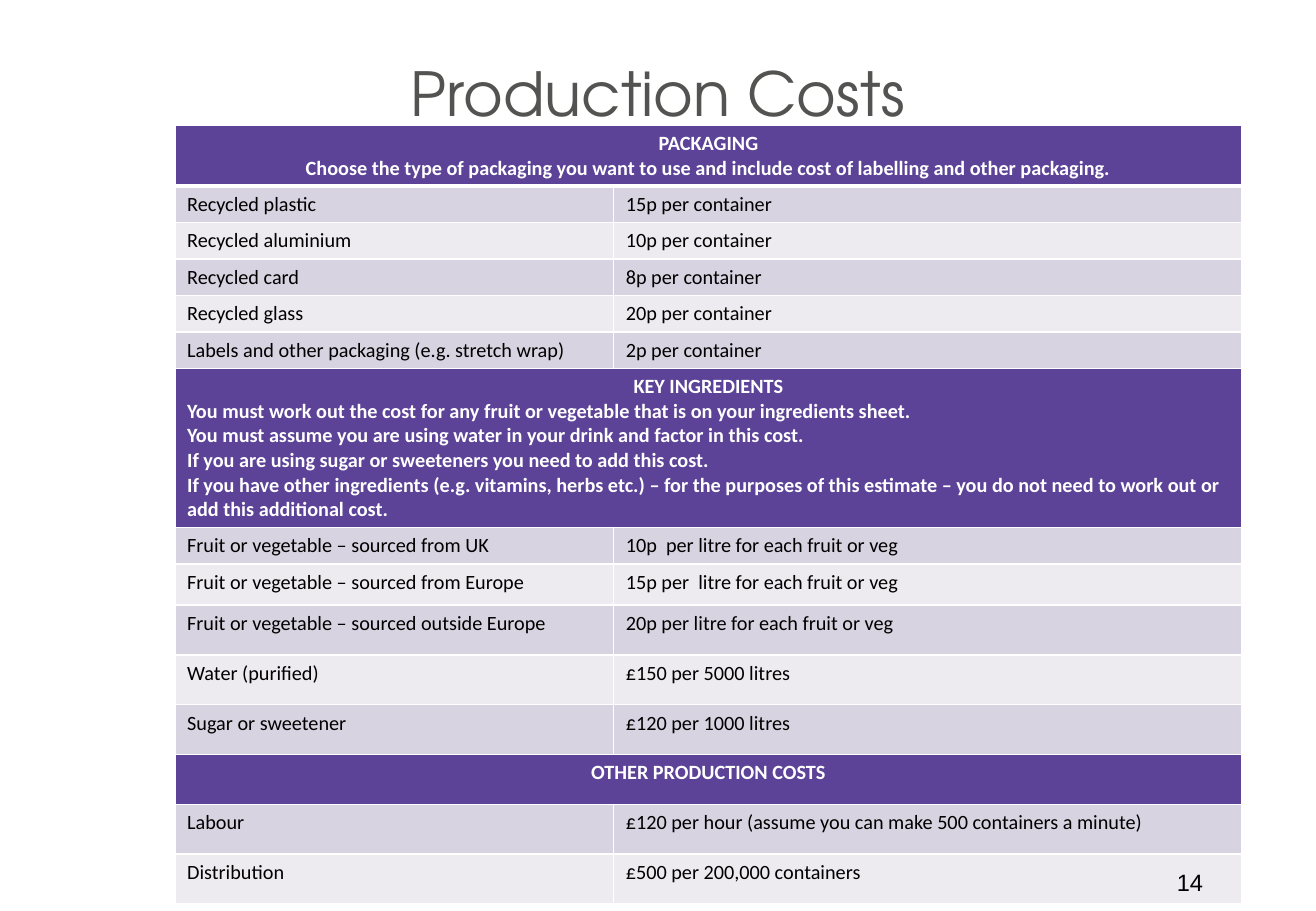
import pptx
import pptx.util
import pptx.dml.color
import pptx.enum.text
import pptx.oxml.ns
from lxml import etree

Inches = pptx.util.Inches
ALIGN = pptx.enum.text.PP_ALIGN
HEADING_FILL = "5C4397"
BAND_FILLS = ["D8D3E0", "EDEAF0"]
WHITE = "FFFFFF"
BLACK = "000000"

SECTIONS = [
    (["PACKAGING",
      "Choose the type of packaging you want to use and include cost of labelling and other packaging."],
     [("Recycled plastic", "15p per container"),
      ("Recycled aluminium", "10p per container"),
      ("Recycled card", "8p per container"),
      ("Recycled glass", "20p per container"),
      ("Labels and other packaging (e.g. stretch wrap)", "2p per container")]),
    (["KEY INGREDIENTS",
      "You must work out the cost for any fruit or vegetable that is on your ingredients sheet.",
      "You must assume you are using water in your drink and factor in this cost.",
      "If you are using sugar or sweeteners you need to add this cost.",
      "If you have other ingredients (e.g. vitamins, herbs etc.) – for the purposes of this estimate – "
      "you do not need to work out or add this additional cost."],
     [("Fruit or vegetable – sourced from UK", "10p  per litre for each fruit or veg"),
      ("Fruit or vegetable – sourced from Europe", "15p per  litre for each fruit or veg"),
      ("Fruit or vegetable – sourced outside Europe", "20p per litre for each fruit or veg"),
      ("Water (purified)", "£150 per 5000 litres"),
      ("Sugar or sweetener", "£120 per 1000 litres")]),
    (["OTHER PRODUCTION COSTS"],
     [("Labour", "£120 per hour (assume you can make 500 containers a minute)"),
      ("Distribution", "£500 per 200,000 containers")]),
]
COLUMN_WIDTHS = [3.61, 5.17]
ROW_HEIGHTS = [0.49] + [0.3] * 5 + [1.31, 0.3, 0.34] + [0.41] * 6


def color(value):
    """Return the colour for a hex string."""
    return pptx.dml.color.RGBColor.from_string(value)


def format_text(text_frame, font_name, size, font_color, alignment, bold=False):
    """Format every paragraph of a text frame alike."""
    for paragraph in text_frame.paragraphs:
        paragraph.alignment = alignment
        for run in paragraph.runs:
            run.font.name = font_name
            run.font.size = pptx.util.Pt(size)
            run.font.bold = bold
            run.font.color.rgb = color(font_color)


def add_text(slide, text, box, font_name, size, font_color, alignment):
    """Add a wrapping text box."""
    text_frame = slide.shapes.add_textbox(*map(Inches, box)).text_frame
    text_frame.word_wrap = True
    text_frame.text = text
    format_text(text_frame, font_name, size, font_color, alignment)


def add_border(cell, side, width):
    """Add a white border line to one side of a cell."""
    qn = pptx.oxml.ns.qn
    properties = cell._tc.get_or_add_tcPr()
    line = etree.SubElement(properties, qn("a:" + side), w=str(pptx.util.Pt(width)))
    fill = etree.SubElement(line, qn("a:solidFill"))
    etree.SubElement(fill, qn("a:srgbClr"), val=WHITE)


def style_cell(cell, fill, bottom_width=1):
    """Give a cell its borders and fill."""
    for side, width in (("lnL", 1), ("lnR", 1), ("lnB", bottom_width)):
        add_border(cell, side, width)
    cell.fill.solid()
    cell.fill.fore_color.rgb = color(fill)


def fill_heading(table, row, lines):
    """Fill a merged section heading row."""
    first, last = table.cell(row, 0), table.cell(row, 1)
    for cell in (first, last):
        style_cell(cell, HEADING_FILL, 3 if row == 0 else 1)
    first.merge(last)
    first.text_frame.text = "\n".join(lines)
    alignment = ALIGN.CENTER if row == 0 else ALIGN.LEFT
    format_text(first.text_frame, "Calibri", 12, WHITE, alignment, True)
    first.text_frame.paragraphs[0].alignment = ALIGN.CENTER


def fill_item(table, row, values, fill):
    """Fill a row with an item and its cost."""
    for column, value in enumerate(values):
        cell = table.cell(row, column)
        style_cell(cell, fill)
        cell.text_frame.text = value
        format_text(cell.text_frame, "Calibri", 12, BLACK, ALIGN.LEFT)


def add_cost_table(slide):
    """Add the table of production costs."""
    frame = slide.shapes.add_table(
        len(ROW_HEIGHTS), len(COLUMN_WIDTHS), Inches(1.44), Inches(1.03),
        Inches(sum(COLUMN_WIDTHS)), Inches(sum(ROW_HEIGHTS)))
    table = frame.table
    table.first_row = table.horz_banding = False
    for column, width in zip(table.columns, COLUMN_WIDTHS):
        column.width = Inches(width)
    for table_row, height in zip(table.rows, ROW_HEIGHTS):
        table_row.height = Inches(height)
    row = 0
    for heading, items in SECTIONS:
        fill_heading(table, row, heading)
        for index, values in enumerate(items):
            fill_item(table, row + 1 + index, values, BAND_FILLS[index % 2])
        row += 1 + len(items)


def main():
    """Build and save the production costs slide."""
    presentation = pptx.Presentation()
    presentation.slide_width = Inches(10.83)
    presentation.slide_height = Inches(7.5)
    slide = presentation.slides.add_slide(presentation.slide_layouts[6])
    add_text(slide, "Production Costs", (0.54, 0.41, 9.75, 1.37),
             "TeX Gyre Adventor", 36, "535451", ALIGN.CENTER)
    add_cost_table(slide)
    add_text(slide, "14", (7.47, 7.1, 2.53, 0.4), "Arial", 14, BLACK, ALIGN.RIGHT)
    presentation.save("out.pptx")


if __name__ == "__main__":
    main()
